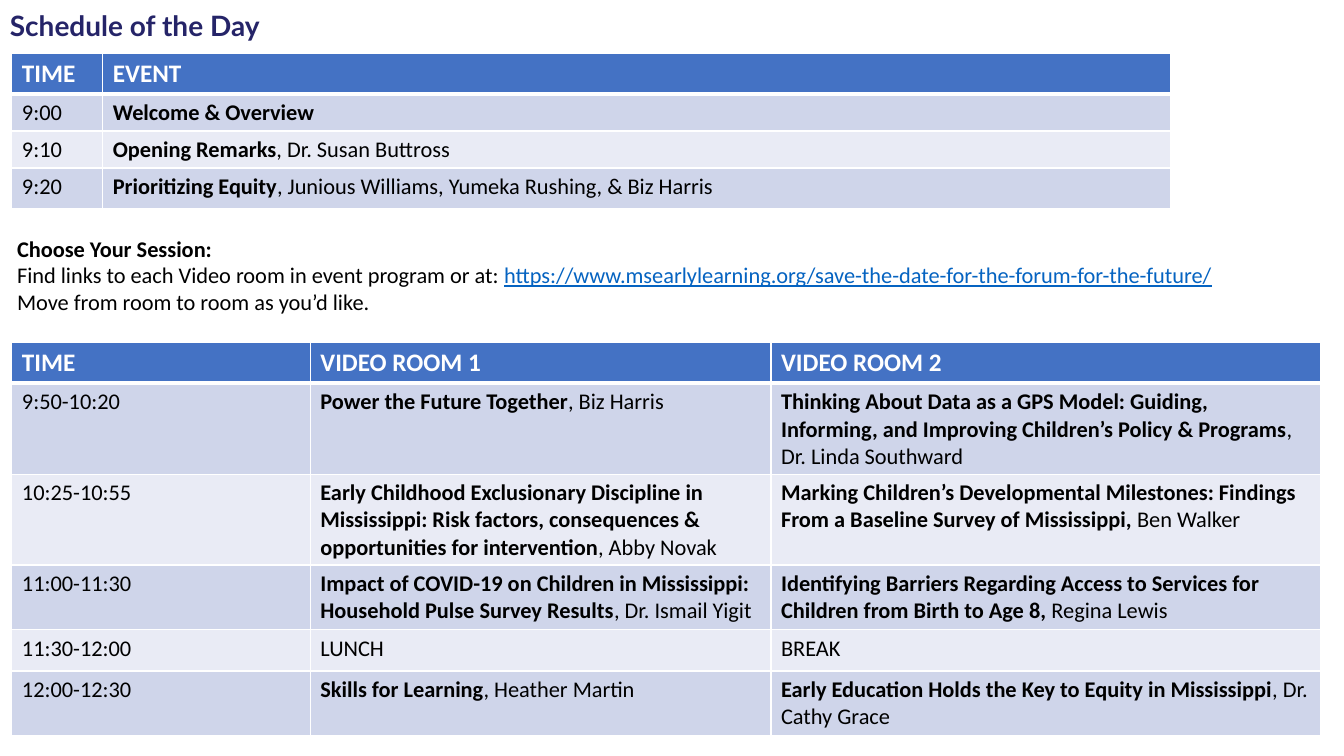
from dataclasses import dataclass

from pptx import Presentation
from pptx.dml.color import RGBColor
from pptx.enum.text import MSO_ANCHOR, MSO_AUTO_SIZE
from pptx.oxml import parse_xml
from pptx.oxml.ns import nsdecls
from pptx.util import Cm, Pt

NAVY, BLUE, LINK, BLACK, WHITE = "252468", "4472C4", "0563C1", "000000", "FFFFFF"
BANDS = ("CFD5EA", "E9EBF5")


@dataclass
class Run:
    text: str
    bold: bool = False
    size: int = 16
    color: str = BLACK
    font: str = "Calibri"
    underline: bool = False


@dataclass
class Schedule:
    left: float
    top: float
    widths: list[float]
    heights: list[float]
    headings: list[str]
    rows: list[list[list[Run]]]


@dataclass
class Note:
    left: float
    top: float
    width: float
    height: float
    paragraphs: list[list[Run]]
    wrap: bool = True
    anchor: MSO_ANCHOR = MSO_ANCHOR.TOP


def rgb(value: str) -> RGBColor:
    return RGBColor.from_string(value)


def entry(title: str, speaker: str = "") -> list[Run]:
    """Bold session title followed by the speaker in regular weight."""
    return [Run(title, bold=True)] + ([Run(speaker)] if speaker else [])


def write_runs(p, runs: list[Run]) -> None:
    for run in runs:
        r = p.add_run()
        r.text = run.text
        formats = {"name": run.font, "size": Pt(run.size),
                   "bold": run.bold, "underline": run.underline}
        for name, value in formats.items():
            setattr(r.font, name, value)
        r.font.color.rgb = rgb(run.color)


def add_borders(cell, widths: dict[str, int]) -> None:
    """White cell borders; widths in points, keyed L, R, T, B in schema order."""
    for side, width in widths.items():
        cell._tc.get_or_add_tcPr().append(parse_xml(
            f'<a:ln{side} {nsdecls("a")} w="{Pt(width)}"><a:solidFill>'
            f'<a:srgbClr val="{WHITE}"/></a:solidFill></a:ln{side}>'))


def add_schedule(s, schedule: Schedule) -> None:
    header = [[Run(text, bold=True, size=18, color=WHITE)] for text in schedule.headings]
    grid = [header] + schedule.rows
    table = s.shapes.add_table(
        len(grid), len(header), Cm(schedule.left), Cm(schedule.top),
        Cm(sum(schedule.widths)), Cm(sum(schedule.heights))).table
    for column, width in zip(table.columns, schedule.widths):
        column.width = Cm(width)
    for i, (row, height) in enumerate(zip(grid, schedule.heights)):
        table.rows[i].height = Cm(height)
        for j, runs in enumerate(row):
            cell = table.cell(i, j)
            add_borders(cell, {"L": 1, "R": 1, "T": 3 if i == 1 else 1,
                               "B": 3 if i == 0 else 1})
            cell.fill.solid()
            cell.fill.fore_color.rgb = rgb(BANDS[(i - 1) % 2] if i else BLUE)
            write_runs(cell.text_frame.paragraphs[0], runs)


def add_note(s, note: Note) -> None:
    box = s.shapes.add_textbox(Cm(note.left), Cm(note.top), Cm(note.width), Cm(note.height))
    tf = box.text_frame
    formats = {"word_wrap": note.wrap, "vertical_anchor": note.anchor,
               "auto_size": MSO_AUTO_SIZE.SHAPE_TO_FIT_TEXT}
    for name, value in formats.items():
        setattr(tf, name, value)
    for i, runs in enumerate(note.paragraphs):
        write_runs(tf.add_paragraph() if i else tf.paragraphs[0], runs)


TITLE = Note(0, 0.08, 7.09, 1.11, [[Run("Schedule of the Day", True, 20, NAVY, "Lato")]],
             wrap=False, anchor=MSO_ANCHOR.MIDDLE)

OPENING = Schedule(
    0.3, 1.35, [2.29, 26.92], [0.98, 0.93, 0.93, 1.02], ["TIME", "EVENT"],
    [
        [[Run("9:00")], entry("Welcome & Overview")],
        [[Run("9:10")], entry("Opening Remarks", ", Dr. Susan Buttross")],
        [[Run("9:20")], entry("Prioritizing Equity",
                              ", Junious Williams, Yumeka Rushing, & Biz Harris")],
    ])

SESSIONS = Schedule(
    0.3, 8.64, [7.52, 11.61, 13.84], [0.97, 2.29, 2.29, 1.63, 1.04, 1.63],
    ["TIME", "VIDEO ROOM 1", "VIDEO ROOM 2"],
    [
        [[Run("9:50-10:20")],
         entry("Power the Future Together", ", Biz Harris"),
         entry("Thinking About Data as a GPS Model: Guiding, Informing, and Improving "
               "Children’s Policy & Programs", ", Dr. Linda Southward")],
        [[Run("10:25-10:55")],
         entry("Early Childhood Exclusionary Discipline in Mississippi: Risk factors, "
               "consequences & opportunities for intervention", ", Abby Novak"),
         entry("Marking Children’s Developmental Milestones: Findings From a Baseline "
               "Survey of Mississippi, ", "Ben Walker")],
        [[Run("11:00-11:30")],
         entry("Impact of COVID-19 on Children in Mississippi: Household Pulse Survey "
               "Results", ", Dr. Ismail Yigit"),
         entry("Identifying Barriers Regarding Access to Services for Children from "
               "Birth to Age 8, ", "Regina Lewis")],
        [[Run("11:30-12:00")], [Run("LUNCH")], [Run("BREAK")]],
        [[Run("12:00-12:30")],
         entry("Skills for Learning", ", Heather Martin"),
         entry("Early Education Holds the Key to Equity in Mississippi",
               ", Dr. Cathy Grace")],
    ])

CHOICE = Note(0.18, 5.79, 32.97, 2.31, [
    [Run("Choose Your Session:", bold=True)],
    [Run("Find links to each Video room in event program or at: "),
     Run("https://www.msearlylearning.org/save-the-date-for-the-forum-for-the-future/",
         color=LINK, underline=True)],
    [Run("Move from room to room as you’d like.")],
])


def main() -> None:
    prs = Presentation()
    prs.slide_width, prs.slide_height = Cm(33.87), Cm(19.05)
    s = prs.slides.add_slide(prs.slide_layouts[6])
    add_note(s, TITLE)
    for schedule in (OPENING, SESSIONS):
        add_schedule(s, schedule)
    add_note(s, CHOICE)
    prs.save("out.pptx")


if __name__ == "__main__":
    main()
